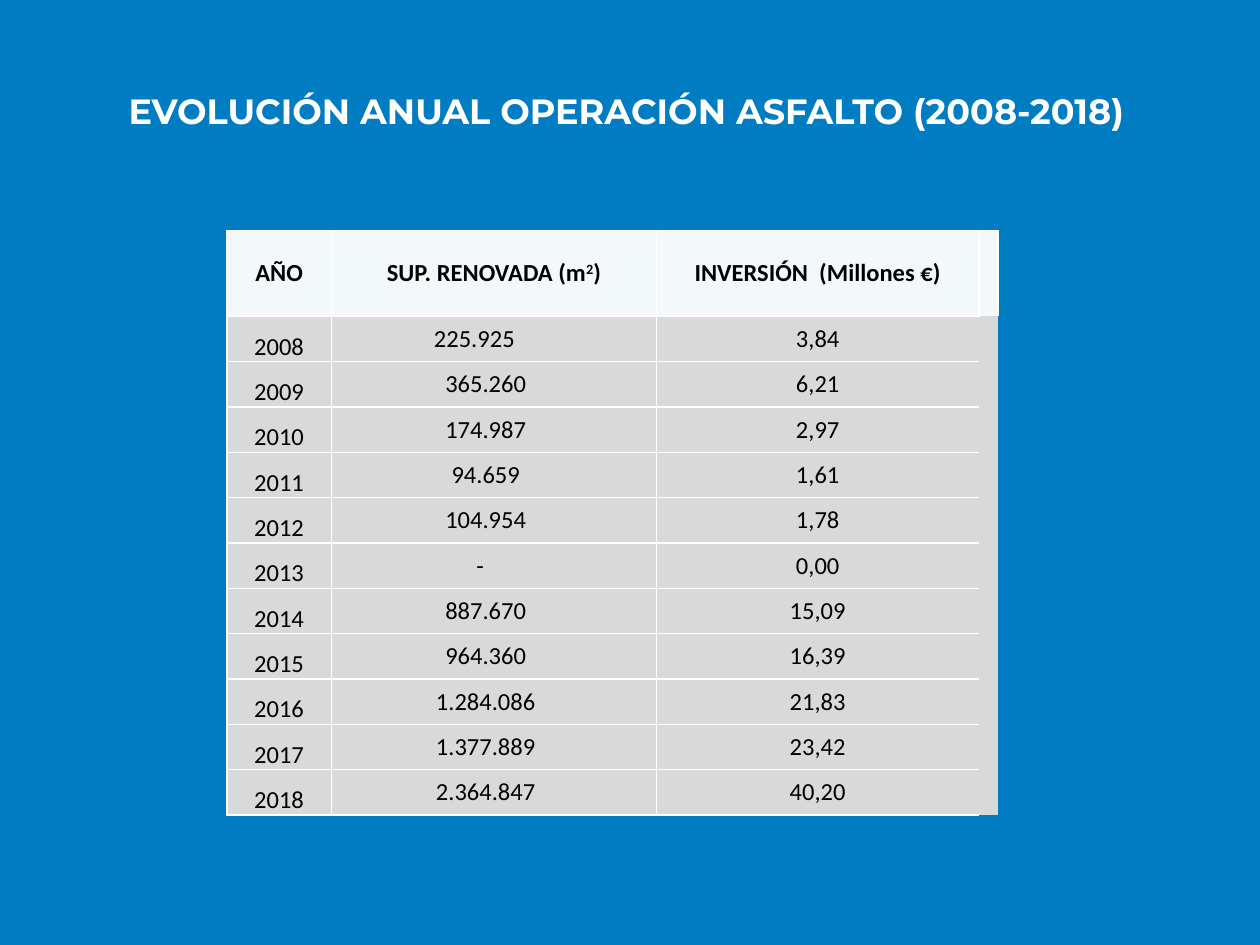
"""Build a slide with the yearly figures of the asphalt works."""
import dataclasses

import lxml.etree
import pptx
import pptx.dml.color
import pptx.enum.text
import pptx.oxml.ns
import pptx.util

Inches = pptx.util.Inches
Anchor = pptx.enum.text.MSO_ANCHOR
Align = pptx.enum.text.PP_ALIGN

HUES = {"back": "007CC2", "white": "FFFFFF", "black": "000000",
        "head": "F3F9FA", "body": "D9D9D9"}
WIDTHS = (0.83, 2.58, 2.56, 0.15)
HEAD_HIGH, ROW_HIGH = 0.68, 0.36


@dataclasses.dataclass
class Year:
    year: str
    area: str
    cost: str
    inset: float = 0.13


YEARS = [
    Year("2008", "225.925", "3,84", 0.31),
    Year("2009", "365.260", "6,21"),
    Year("2010", "174.987", "2,97"),
    Year("2011", "94.659", "1,61"),
    Year("2012", "104.954", "1,78"),
    Year("2013", "-", "0,00", 0.22),
    Year("2014", "887.670", "15,09"),
    Year("2015", "964.360", "16,39"),
    Year("2016", "1.284.086", "21,83"),
    Year("2017", "1.377.889", "23,42"),
    Year("2018", "2.364.847", "40,20"),
]


def color(name: str) -> pptx.dml.color.RGBColor:
    """Return the named colour."""
    return pptx.dml.color.RGBColor.from_string(HUES[name])


def add_run(para, text: str, font: str, size: float, hue: str, bold: bool):
    """Add one formatted run to a paragraph."""
    run = para.add_run()
    run.text = text
    run.font.name = font
    run.font.size = pptx.util.Pt(size)
    run.font.bold = bold
    run.font.color.rgb = color(hue)
    return run


def style_cell(cell, fill: str, sides: str) -> None:
    """Set the margins, borders and fill of a cell."""
    cell.margin_left = cell.margin_right = 0
    cell.margin_top = cell.margin_bottom = 0
    props = cell._tc.get_or_add_tcPr()
    name = pptx.oxml.ns.qn
    for side in "LRTB":
        line = lxml.etree.SubElement(props, name(f"a:ln{side}"), w="12700")
        if side in sides:
            paint = lxml.etree.SubElement(line, name("a:solidFill"))
            lxml.etree.SubElement(paint, name("a:srgbClr"), val=HUES["white"])
        else:
            lxml.etree.SubElement(line, name("a:noFill"))
    cell.fill.solid()
    cell.fill.fore_color.rgb = color(fill)


def fill_cell(cell, text: str, bold: bool = False, anchor=Anchor.MIDDLE):
    """Write centred text in a cell and return its paragraph."""
    cell.vertical_anchor = anchor
    para = cell.text_frame.paragraphs[0]
    para.alignment = Align.CENTER
    add_run(para, text, "Calibri", 14, "black", bold)
    return para


def add_title(slide) -> None:
    """Place and write the title."""
    title = slide.shapes.title
    title.left, title.top = Inches(0.92), Inches(0.25)
    title.width, title.height = Inches(8.58), Inches(1.25)
    frame = title.text_frame
    frame.vertical_anchor = Anchor.MIDDLE
    para = frame.paragraphs[0]
    para.alignment = Align.LEFT
    add_run(para, "EVOLUCIÓN ANUAL OPERACIÓN ASFALTO (2008-2018)",
            "Montserrat", 20, "white", True)


def add_grid(slide) -> None:
    """Add the table of years, areas and costs."""
    high = HEAD_HIGH + ROW_HIGH * len(YEARS)
    grid = slide.shapes.add_table(
        len(YEARS) + 1, len(WIDTHS), Inches(1.8), Inches(1.83),
        Inches(sum(WIDTHS)), Inches(high)).table
    grid.first_row = grid.horz_banding = False
    for column, width in zip(grid.columns, WIDTHS):
        column.width = Inches(width)
    for index, row in enumerate(grid.rows):
        row.height = Inches(ROW_HIGH if index else HEAD_HIGH)
        fill = "body" if index else "head"
        edges = ("LRTB", "LRTB", "LTB", "") if index else ("LRTB",) * 3 + ("LTR",)
        for cell, sides in zip(row.cells, edges):
            style_cell(cell, fill, sides)
    grid.cell(1, 3).merge(grid.cell(len(YEARS), 3))

    fill_cell(grid.cell(0, 0), "AÑO", True)
    para = fill_cell(grid.cell(0, 1), "SUP. RENOVADA (m", True)
    power = add_run(para, "2", "Calibri", 14, "black", True)
    power._r.get_or_add_rPr().set("baseline", "30000")
    add_run(para, ")", "Calibri", 14, "black", True)
    fill_cell(grid.cell(0, 2), "INVERSIÓN  (Millones €)", True)

    for index, item in enumerate(YEARS, 1):
        fill_cell(grid.cell(index, 0), item.year, anchor=Anchor.BOTTOM)
        fill_cell(grid.cell(index, 1), item.area)
        grid.cell(index, 1).margin_right = Inches(item.inset)
        fill_cell(grid.cell(index, 2), item.cost)


def main() -> None:
    """Build and save the slide."""
    deck = pptx.Presentation()
    deck.slide_width, deck.slide_height = Inches(10), Inches(7.5)
    slide = deck.slides.add_slide(deck.slide_layouts.get_by_name("Title Only"))
    slide.background.fill.solid()
    slide.background.fill.fore_color.rgb = color("back")
    add_title(slide)
    add_grid(slide)
    deck.save("out.pptx")


if __name__ == "__main__":
    main()
